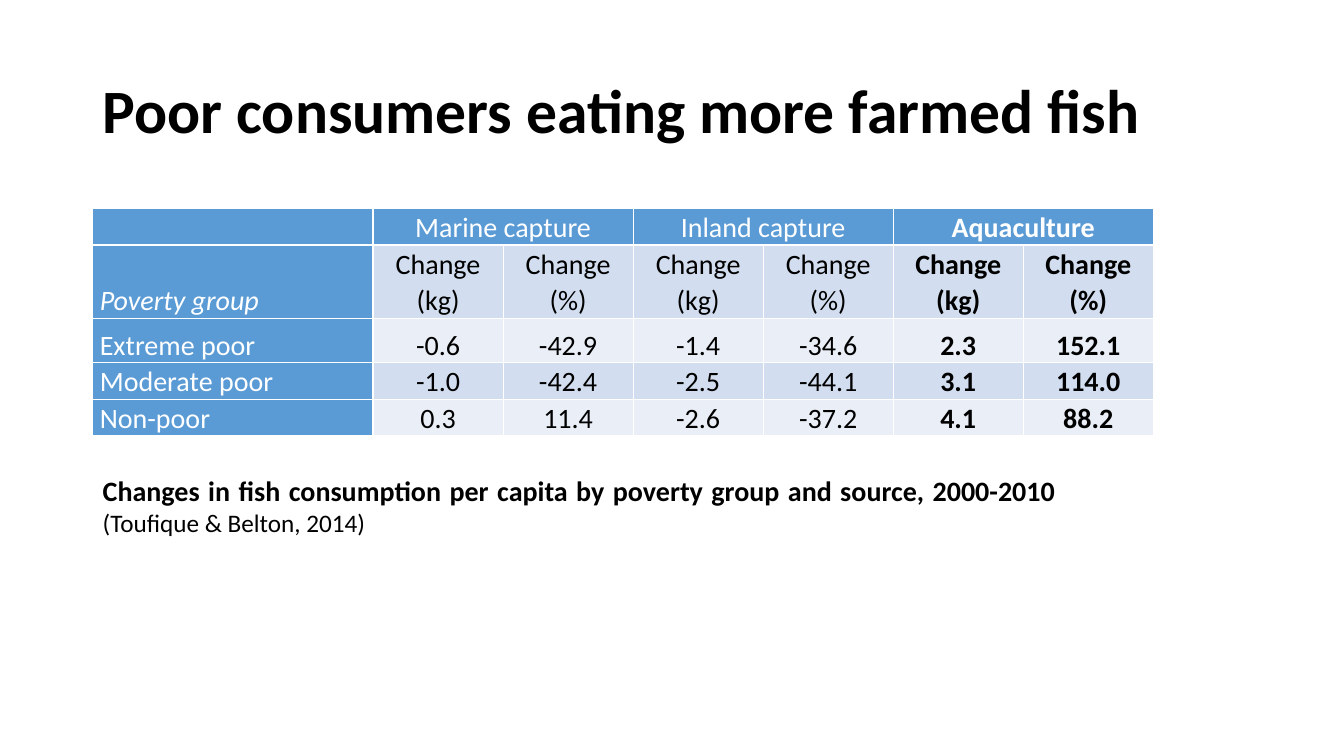
import pptx
import pptx.util
import pptx.dml.color
import pptx.enum.text
from lxml import etree
from pptx.util import Inches, Pt
from pptx.enum.text import PP_ALIGN, MSO_ANCHOR

# Content
TITLE = "Poor consumers eating more farmed fish"
CAPTION = "Changes in fish consumption per capita by poverty group and source, 2000-2010 "
CITATION = "(Toufique & Belton, 2014)"
SOURCES = ["Marine capture", "Inland capture", "Aquaculture"]
MEASURES = ["Change (kg)", "Change (%)"]
GROUPS = [
    ("Extreme poor", "-0.6", "-42.9", "-1.4", "-34.6", "2.3", "152.1"),
    ("Moderate poor", "-1.0", "-42.4", "-2.5", "-44.1", "3.1", "114.0"),
    ("Non-poor", "0.3", "11.4", "-2.6", "-37.2", "4.1", "88.2"),
]

# Layout and colours
LEFT = 0.92
COL_WIDTHS = [2.78] + [1.29] * 6
ROW_HEIGHTS = [0.36, 0.73, 0.44, 0.36, 0.36]
BLUE, BANDS = "5B9BD5", ("EAEFF7", "D2DEEF")
WHITE, BLACK = "FFFFFF", "000000"
AQUACULTURE_COL = 5


def rgb(color):
    return pptx.dml.color.RGBColor.from_string(color)


def add_run(p, text, size, color=BLACK, bold=False, italic=False):
    r = p.add_run()
    r.text = text
    r.font.name, r.font.size = "Calibri", Pt(size)
    r.font.bold, r.font.italic = bold, italic
    r.font.color.rgb = rgb(color)


def add_text(s, top, width, height, anchor):
    tf = s.shapes.add_textbox(Inches(LEFT), Inches(top), Inches(width), Inches(height)).text_frame
    tf.word_wrap = True
    tf.vertical_anchor = anchor
    return tf.paragraphs[0]


def set_borders(cell):
    """White 1 pt lines, placed before the cell fill as the schema requires."""
    ns = "http://schemas.openxmlformats.org/drawingml/2006/main"
    tcPr = cell._tc.get_or_add_tcPr()
    for i, side in enumerate(("lnL", "lnR", "lnT", "lnB")):
        ln = etree.fromstring(
            f'<a:{side} xmlns:a="{ns}" w="12700"><a:solidFill>'
            f'<a:srgbClr val="{WHITE}"/></a:solidFill></a:{side}>')
        tcPr.insert(i, ln)


prs = pptx.Presentation()
prs.slide_width, prs.slide_height = Inches(13.33), Inches(7.5)
s = prs.slides.add_slide(prs.slide_layouts[6])

# Title
p = add_text(s, 0.4, 11.5, 1.45, MSO_ANCHOR.MIDDLE)
p.line_spacing = 0.9
add_run(p, TITLE, 44, bold=True)

# Table: two header rows, then one row per poverty group
header = [""] + [text for source in SOURCES for text in (source, "")]
rows = [header, ["Poverty group"] + MEASURES * len(SOURCES)] + GROUPS
table = s.shapes.add_table(
    len(rows), len(COL_WIDTHS), Inches(LEFT), Inches(2.07),
    Inches(sum(COL_WIDTHS)), Inches(sum(ROW_HEIGHTS))).table
for column, width in zip(table.columns, COL_WIDTHS):
    column.width = Inches(width)
for row, height in zip(table.rows, ROW_HEIGHTS):
    row.height = Inches(height)

for i, row in enumerate(rows):
    for j, text in enumerate(row):
        cell = table.cell(i, j)
        heading = i == 0 or j == 0
        cell.fill.solid()
        cell.fill.fore_color.rgb = rgb(BLUE if heading else BANDS[i % 2])
        set_borders(cell)
        cell.margin_left = cell.margin_right = Inches(0.07)
        cell.margin_top = cell.margin_bottom = 0
        cell.vertical_anchor = MSO_ANCHOR.BOTTOM
        p = cell.text_frame.paragraphs[0]
        p.alignment = PP_ALIGN.LEFT if j == 0 else PP_ALIGN.CENTER
        p.line_spacing = 1.07
        if text:
            add_run(p, text, 20, WHITE if heading else BLACK,
                    bold=j >= AQUACULTURE_COL, italic=(i, j) == (1, 0))
for j in range(1, len(COL_WIDTHS), len(MEASURES)):
    table.cell(0, j).merge(table.cell(0, j + len(MEASURES) - 1))

# Caption with its citation
p = add_text(s, 4.65, 9.65, 0.74, MSO_ANCHOR.TOP)
p.alignment = PP_ALIGN.JUSTIFY
add_run(p, CAPTION, 20, bold=True)
add_run(p, CITATION, 18)

prs.save("out.pptx")
